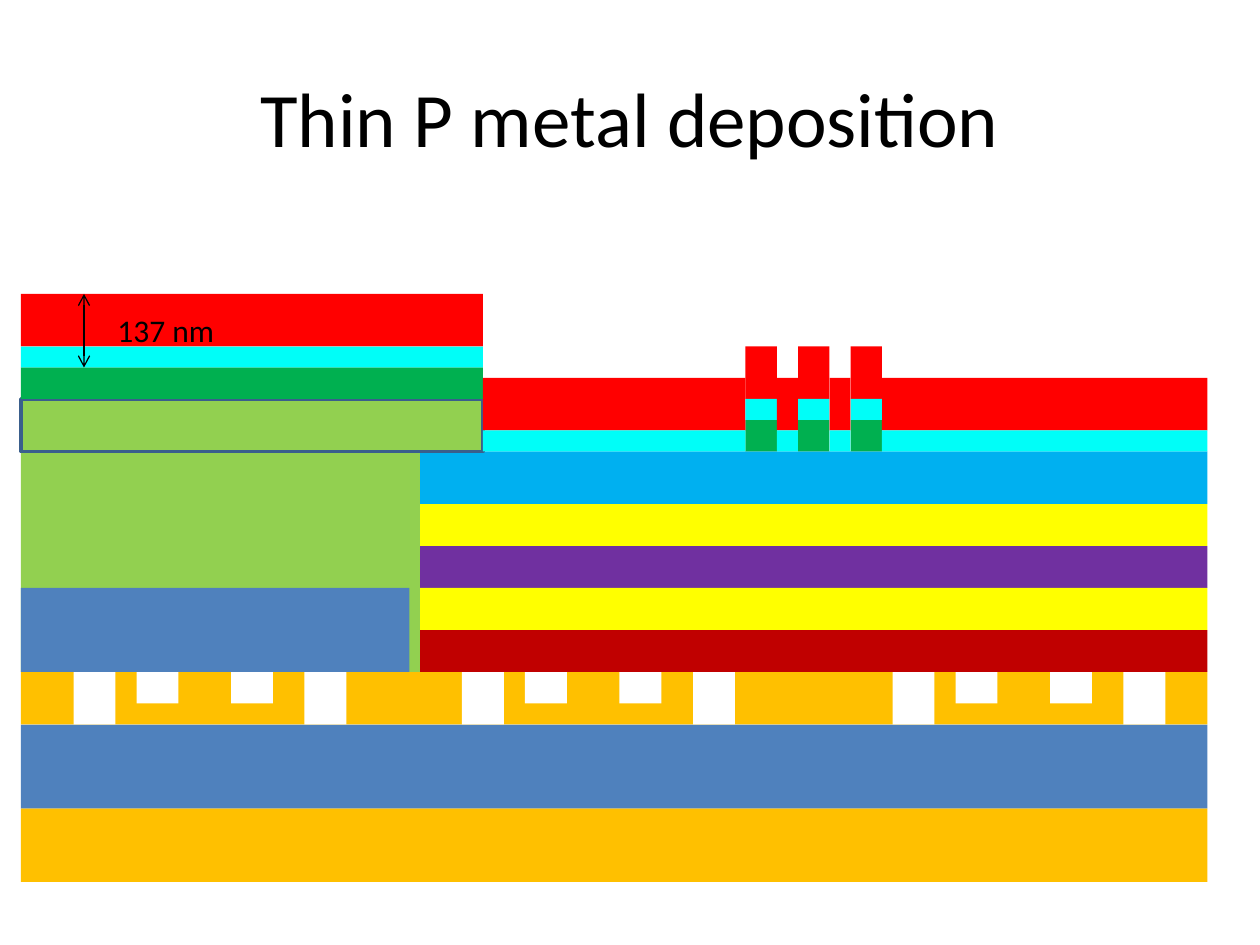
"""Draw the layer stack for a thin P metal deposition step on a 120 by 90 grid."""
import lxml.etree
import pptx
import pptx.dml.color
import pptx.enum.shapes
import pptx.enum.text
import pptx.oxml.ns
import pptx.util

HUES = {
    "gold": "FFC000", "steel": "4F81BD", "white": "FFFFFF", "lime": "92D050",
    "sky": "00B0F0", "yellow": "FFFF00", "purple": "7030A0", "wine": "C00000",
    "green": "00B050", "red": "FF0000", "cyan": "00FEF8", "navy": "3A5F8C",
    "black": "000000",
}
RGB = {name: pptx.dml.color.RGBColor.from_string(code) for name, code in HUES.items()}

deck = pptx.Presentation()
deck.slide_width = pptx.util.Inches(10)
deck.slide_height = pptx.util.Inches(7.5)
slide = deck.slides.add_slide(deck.slide_layouts[6])
unit = deck.slide_width / 120


def span(*cells):
    return [round(cell * unit) for cell in cells]


def layer(hue, col, row, wide, high):
    rect = slide.shapes.add_shape(
        pptx.enum.shapes.MSO_SHAPE.RECTANGLE, *span(col, row, wide, high))
    rect.shadow.inherit = False
    rect.fill.solid()
    rect.fill.fore_color.rgb = RGB[hue]
    rect.line.fill.background()
    return rect


left, right, step, mesa = 2, 115, 40, 46
full = right - left

for hue, row, high in [("gold", 77, 7), ("steel", 69, 8), ("gold", 64, 5)]:
    layer(hue, left, row, full, high)

for start in (7, 44, 85):
    for shift, high in [(0, 5), (6, 3), (15, 3), (22, 5)]:
        layer("white", start + shift, 64, 4, high)

layer("lime", left, 43, 38, 21)
layer("steel", left, 56, 37, 8)

row = 43
for hue, high in [("sky", 5), ("yellow", 4), ("purple", 4), ("yellow", 4), ("wine", 4)]:
    layer(hue, step, row, right - step, high)
    row += high

pad = layer("lime", left, 38, mesa - left, 5)
pad.line.color.rgb = RGB["navy"]
pad.line.width = pptx.util.Pt(2)
layer("green", left, 35, mesa - left, 3)

fins = [71, 76, 81]
for col in fins:
    layer("green", col, 40, 3, 3)

films = [(left, 28, mesa - left), (mesa, 36, 25), (84, 36, 31)]
films += [(col, 33, 3) for col in fins]
films += [(col + 3, 36, 2) for col in fins[:-1]]
for col, row, wide in films:
    layer("red", col, row, wide, 5)
    layer("cyan", col, row + 5, wide, 2)

gauge = slide.shapes.add_connector(
    pptx.enum.shapes.MSO_CONNECTOR.STRAIGHT, *span(8, 28, 8, 35))
gauge.line.color.rgb = RGB["black"]
gauge.line.width = pptx.util.Pt(0.75)
props = gauge._element.find(pptx.oxml.ns.qn("p:spPr"))
stroke = props.find(pptx.oxml.ns.qn("a:ln"))
for tag in ("a:headEnd", "a:tailEnd"):
    lxml.etree.SubElement(stroke, pptx.oxml.ns.qn(tag), type="arrow")
lxml.etree.SubElement(props, pptx.oxml.ns.qn("a:effectLst"))

align = pptx.enum.text.PP_ALIGN
anchor = pptx.enum.text.MSO_ANCHOR
fit = pptx.enum.text.MSO_AUTO_SIZE
texts = [
    ("Thin P metal deposition", (6, 3.6, 108, 15), 44, align.CENTER,
     {"word_wrap": True, "vertical_anchor": anchor.MIDDLE}),
    ("137 nm", (10, 29, 14, 4.8), 18, align.LEFT,
     {"word_wrap": True, "auto_size": fit.SHAPE_TO_FIT_TEXT}),
]
for words, cells, size, side, form in texts:
    frame = slide.shapes.add_textbox(*span(*cells)).text_frame
    for key, value in form.items():
        setattr(frame, key, value)
    para = frame.paragraphs[0]
    para.alignment = side
    run = para.add_run()
    run.text = words
    for key, value in {"name": "Calibri", "size": pptx.util.Pt(size)}.items():
        setattr(run.font, key, value)
    run.font.color.rgb = RGB["black"]

deck.save("out.pptx")
